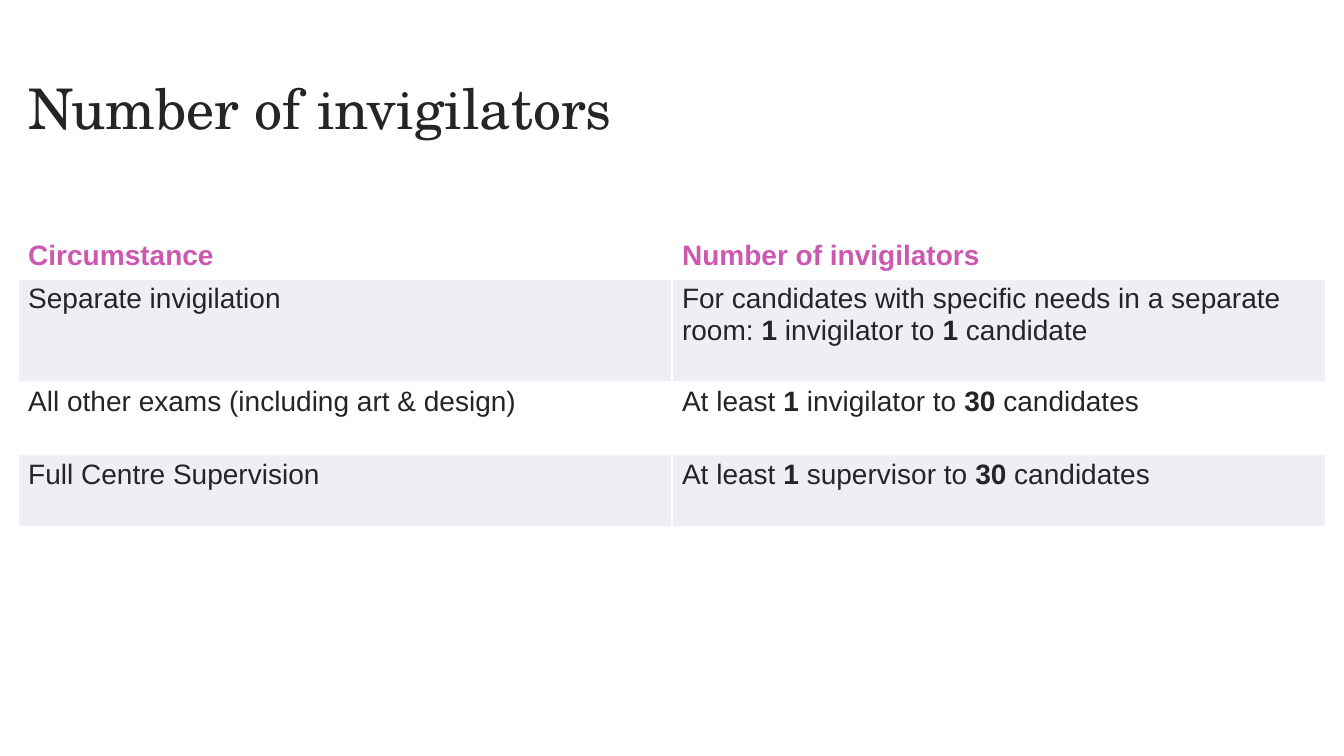
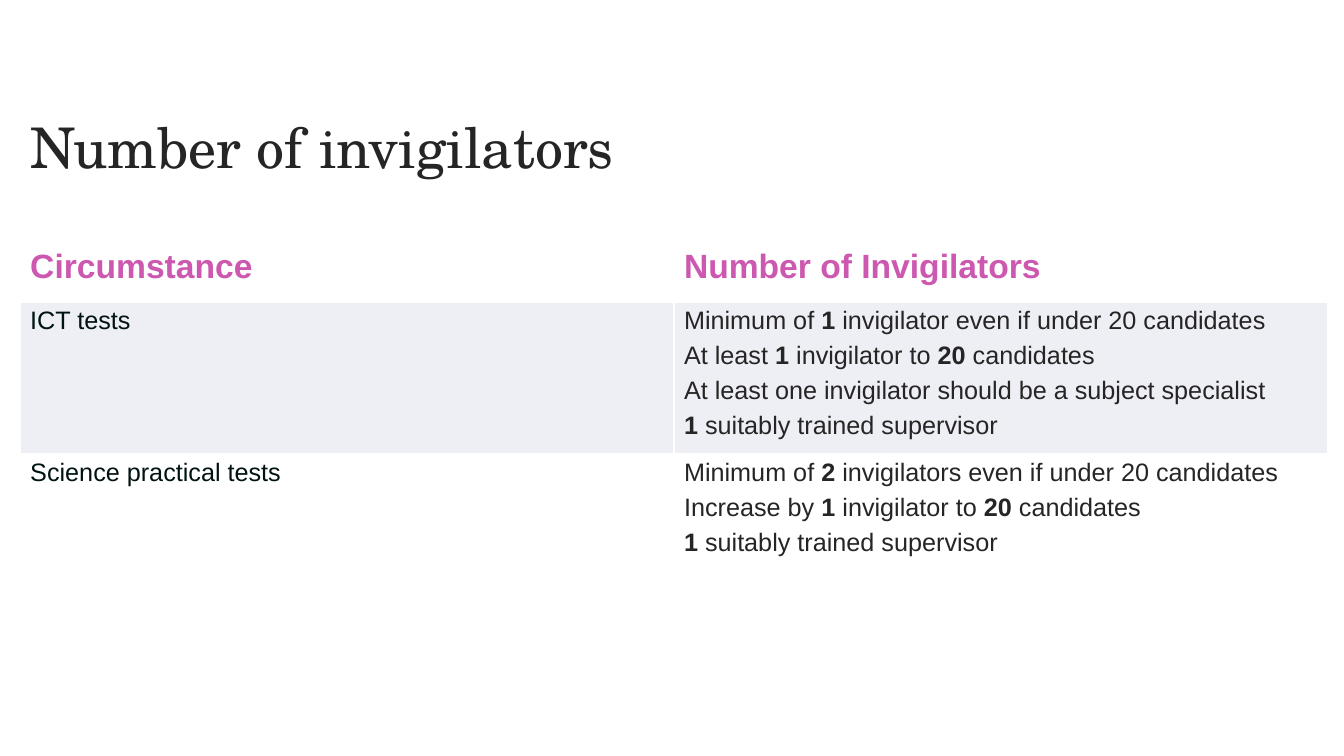
import dataclasses

import pptx
import pptx.dml.color
import pptx.enum.text
import pptx.oxml
import pptx.oxml.ns
import pptx.util
from pptx.util import Inches


@dataclasses.dataclass(frozen=True)
class Theme:
    title_font: str = "TeX Gyre Schola"
    body_font: str = "Arial"
    title_size: int = 40
    text: str = "252525"
    dark: str = "001312"
    accent: str = "CC58B0"
    white: str = "FFFFFF"
    band: str = "EEEEF5"
    thin_border: int = 1
    header_border: int = 3


THEME = Theme()


def rgb(color):
    return pptx.dml.color.RGBColor.from_string(color)


def format_run(run, font_name, size, color, bold=False):
    run.font.name = font_name
    run.font.size = pptx.util.Pt(size)
    run.font.bold = bold
    run.font.color.rgb = rgb(color)


def add_title(slide, text, left, top):
    box = slide.shapes.add_textbox(Inches(left), Inches(top), Inches(12.72), Inches(0.79))
    frame = box.text_frame
    frame.word_wrap = True
    frame.vertical_anchor = pptx.enum.text.MSO_ANCHOR.MIDDLE
    frame.text = text
    paragraph = frame.paragraphs[0]
    paragraph.line_spacing = 0.9
    format_run(paragraph.runs[0], THEME.title_font, THEME.title_size, THEME.text)


def set_borders(cell, top, bottom):
    """Draw white borders; widths are in points."""
    properties = cell._tc.get_or_add_tcPr()
    widths = {"L": THEME.thin_border, "R": THEME.thin_border, "T": top, "B": bottom}
    for side, width in widths.items():
        properties.append(pptx.oxml.parse_xml(
            f'<a:ln{side} {pptx.oxml.ns.nsdecls("a")} w="{pptx.util.Pt(width)}">'
            f'<a:solidFill><a:srgbClr val="{THEME.white}"/></a:solidFill></a:ln{side}>'))


def fill_cell(cell, text, size, color, bold=False):
    """Write one paragraph a line; words between asterisks are bold."""
    frame = cell.text_frame
    for index, line in enumerate(text.split("\n")):
        paragraph = frame.add_paragraph() if index else frame.paragraphs[0]
        if index:
            paragraph.space_before = pptx.util.Pt(5)
        for part_index, part in enumerate(line.split("*")):
            if part:
                run = paragraph.add_run()
                run.text = part
                format_run(run, THEME.body_font, size, color, bold or part_index % 2 == 1)


def add_table(slide, left, top, row_heights, rows, header_size, body_size, label_color):
    """Add a two-column table with a header, banded rows and an empty last row."""
    column_width = 6.485
    frame = slide.shapes.add_table(len(row_heights), 2, Inches(left), Inches(top),
                                   Inches(2 * column_width), Inches(sum(row_heights)))
    table = frame.table
    table.horz_banding = False
    for column in table.columns:
        column.width = Inches(column_width)
    for row_index, height in enumerate(row_heights):
        table.rows[row_index].height = Inches(height)
        is_header = row_index == 0
        is_band = row_index % 2 == 1 and row_index < len(rows)
        for column_index in range(2):
            cell = table.cell(row_index, column_index)
            set_borders(cell,
                        THEME.header_border if row_index == 1 else THEME.thin_border,
                        THEME.header_border if is_header else THEME.thin_border)
            cell.fill.solid()
            cell.fill.fore_color.rgb = rgb(THEME.band if is_band else THEME.white)
            if row_index >= len(rows):
                continue
            text = rows[row_index][column_index]
            if is_header:
                fill_cell(cell, text, header_size, THEME.accent, bold=True)
            else:
                fill_cell(cell, text, body_size, THEME.text if column_index else label_color)


def main():
    presentation = pptx.Presentation()
    presentation.slide_width = Inches(13.33)
    presentation.slide_height = Inches(7.5)
    blank_layout = presentation.slide_layouts[6]

    # General exams
    slide = presentation.slides.add_slide(blank_layout)
    add_title(slide, "Number of invigilators", 0.18, 0.71)
    add_table(slide, 0.18, 2.33, [0.42, 1.02, 0.72, 0.72, 0.84], [
        ("Circumstance", "Number of invigilators"),
        ("Separate invigilation",
         "For candidates with specific needs in a separate room: *1* invigilator to *1* candidate"),
        ("All other exams (including art & design)",
         "At least *1* invigilator to *30* candidates"),
        ("Full Centre Supervision", "At least *1* supervisor to *30* candidates"),
    ], header_size=20, body_size=20, label_color=THEME.text)

    # ICT and science tests
    slide = presentation.slides.add_slide(blank_layout)
    add_title(slide, "Number of invigilators", 0.2, 1.1)
    add_table(slide, 0.2, 2.41, [0.58, 1.44, 1.08, 0.68], [
        ("Circumstance", "Number of Invigilators"),
        ("ICT tests",
         "Minimum of *1 *invigilator even if under 20 candidates\n"
         "At least *1 *invigilator to *20 *candidates\n"
         "At least one invigilator should be a subject specialist\n"
         "*1* suitably trained supervisor"),
        ("Science practical tests",
         "Minimum of *2 *invigilators even if under 20 candidates\n"
         "Increase by *1 *invigilator to *20 *candidates\n"
         "*1* suitably trained supervisor"),
    ], header_size=24, body_size=18, label_color=THEME.dark)

    presentation.save("out.pptx")


if __name__ == "__main__":
    main()
